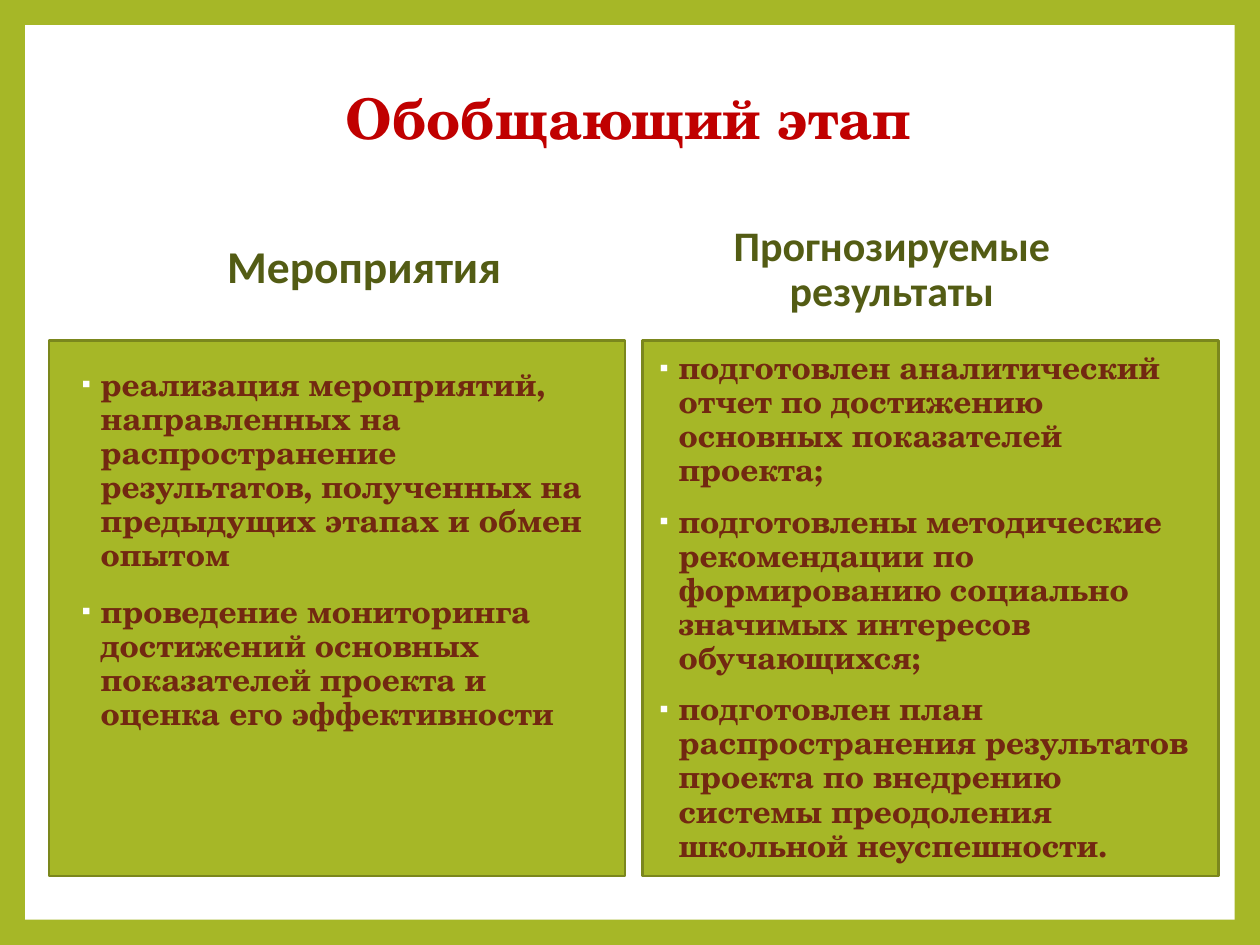
from lxml.etree import SubElement
from pptx import Presentation
from pptx.dml.color import RGBColor
from pptx.enum.shapes import MSO_SHAPE as Shape
from pptx.enum.text import MSO_ANCHOR as Anchor, PP_ALIGN as Align
from pptx.oxml.ns import qn
from pptx.util import Cm, Pt

LIME = RGBColor(0xA6, 0xB7, 0x27)
OLIVE = RGBColor(0x7B, 0x87, 0x1D)
MOSS = RGBColor(0x53, 0x5C, 0x14)
RED = RGBColor(0xC0, 0x00, 0x00)
BROWN = RGBColor(0x72, 0x28, 0x11)
WHITE = RGBColor(0xFF, 0xFF, 0xFF)
SERIF = "TeX Gyre Schola"
SANS = "Calibri"

ACTIVITIES = [
    "реализация мероприятий, направленных на распространение результатов, "
    "полученных на предыдущих этапах и обмен опытом",
    "проведение мониторинга достижений основных показателей проекта и "
    "оценка его эффективности",
]
RESULTS = [
    "подготовлен аналитический отчет по достижению основных показателей проекта;",
    "подготовлены методические рекомендации по формированию социально "
    "значимых интересов обучающихся;",
    "подготовлен план распространения результатов проекта по внедрению "
    "системы преодоления школьной неуспешности.",
]


def write(para, text, size, color, font=SERIF, align=Align.LEFT, before=0, after=0):
    para.alignment = align
    para.line_spacing = 0.9
    para.space_before = Pt(before)
    para.space_after = Pt(after)
    span = para.add_run()
    span.text = text
    span.font.name = font
    span.font.size = Pt(size)
    span.font.bold = True
    span.font.color.rgb = color


def add_bullet(para):
    props = para._p.get_or_add_pPr()
    props.set("marL", str(Cm(0.48)))
    props.set("indent", str(-Cm(0.38)))
    color = SubElement(props, qn("a:buClr"))
    SubElement(color, qn("a:srgbClr"), val=str(WHITE))
    SubElement(props, qn("a:buSzPct"), val="80000")
    SubElement(props, qn("a:buFont"), typeface=SANS)
    SubElement(props, qn("a:buChar"), char="▪")


class StagePage:
    def __init__(self, deck):
        self.page = deck.slides.add_slide(deck.slide_layouts[6])
        fill = self.page.background.fill
        fill.solid()
        fill.fore_color.rgb = LIME

    def panel(self, left, top, width, height, color, border=None):
        box = self.page.shapes.add_shape(
            Shape.RECTANGLE, Cm(left), Cm(top), Cm(width), Cm(height))
        box.shadow.inherit = False
        box.fill.solid()
        box.fill.fore_color.rgb = color
        if border is None:
            box.line.fill.background()
        else:
            box.line.color.rgb = border
            box.line.width = Pt(1.5)
        return box

    def text_box(self, left, top, width, height, anchor=Anchor.TOP):
        box = self.page.shapes.add_textbox(Cm(left), Cm(top), Cm(width), Cm(height))
        box.text_frame.word_wrap = True
        box.text_frame.vertical_anchor = anchor
        return box

    def heading(self, text, left, top, width, height, **style):
        box = self.text_box(left, top, width, height, Anchor.MIDDLE)
        write(box.text_frame.paragraphs[0], text, align=Align.CENTER, **style)

    def bullets(self, box, items, first_after=0):
        frame = box.text_frame
        for index, item in enumerate(items):
            para = frame.add_paragraph() if index else frame.paragraphs[0]
            write(para, item, 18, BROWN, before=10, after=0 if index else first_after)
            add_bullet(para)


def main():
    deck = Presentation()
    deck.slide_width, deck.slide_height = Cm(25.4), Cm(19.05)
    stage = StagePage(deck)

    stage.panel(0.51, 0.51, 24.38, 18.03, WHITE)
    stage.heading("Обобщающий этап", 2.39, 1.12, 20.57, 2.64, size=32, color=RED)

    stage.panel(0.99, 6.86, 11.61, 10.8, LIME, OLIVE)
    stage.heading("Мероприятия", 2.39, 4.37, 9.91, 2.11,
                  size=26, color=MOSS, font=SANS)
    stage.bullets(stage.text_box(1.3, 7.32, 11, 9.6), ACTIVITIES, first_after=3)

    stage.heading("Прогнозируемые результаты", 12.95, 4.37, 10.06, 2.16,
                  size=24, color=MOSS, font=SANS)
    results = stage.panel(12.95, 6.86, 11.61, 10.8, LIME, OLIVE)
    results.text_frame.vertical_anchor = Anchor.MIDDLE
    stage.bullets(results, RESULTS)

    deck.save("out.pptx")


if __name__ == "__main__":
    main()
